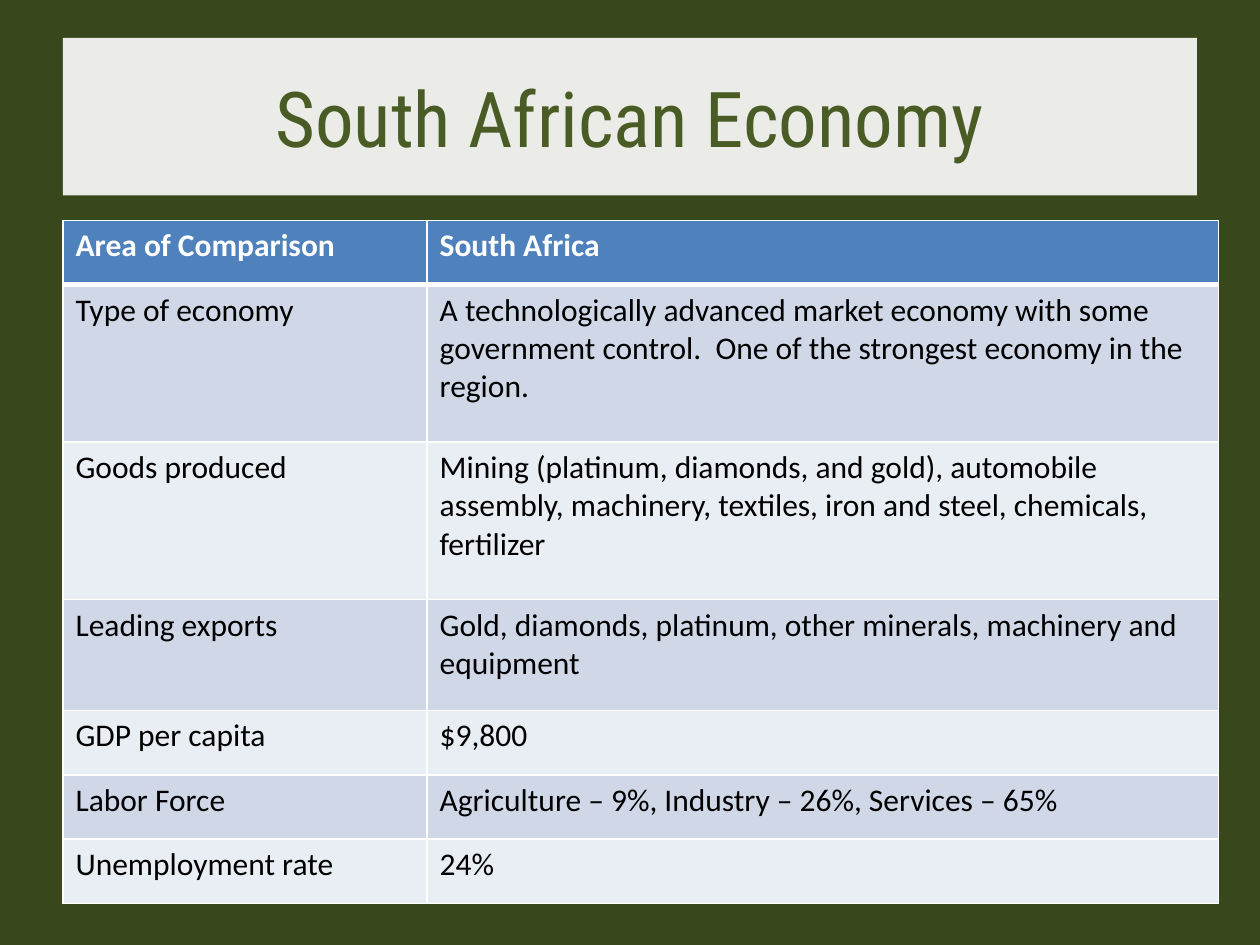
from lxml.etree import SubElement
from pptx import Presentation
from pptx.dml.color import RGBColor
from pptx.enum.shapes import MSO_SHAPE
from pptx.enum.text import MSO_ANCHOR, PP_ALIGN
from pptx.oxml.ns import qn
from pptx.util import Inches, Pt

DARK_GREEN = RGBColor(0x39, 0x47, 0x1D)
TITLE_GREEN = RGBColor(0x4A, 0x5C, 0x26)
HEADER_BLUE = RGBColor(0x4F, 0x81, 0xBD)
BAND_DARK = RGBColor(0xD0, 0xD8, 0xE8)
BAND_LIGHT = RGBColor(0xE9, 0xED, 0xF4)
WHITE = RGBColor(0xFF, 0xFF, 0xFF)
BLACK = RGBColor(0x00, 0x00, 0x00)

COLUMN_WIDTHS = [2.89, 6.28]
ECONOMY_ROWS = [
    (0.51, "Area of Comparison", "South Africa"),
    (1.25, "Type of economy",
     "A technologically advanced market economy with some government control.  "
     "One of the strongest economy in the region."),
    (1.25, "Goods produced",
     "Mining (platinum, diamonds, and gold), automobile assembly, machinery, "
     "textiles, iron and steel, chemicals, fertilizer"),
    (0.88, "Leading exports",
     "Gold, diamonds, platinum, other minerals, machinery and equipment"),
    (0.51, "GDP per capita", "$9,800"),
    (0.51, "Labor Force", "Agriculture – 9%, Industry – 26%, Services – 65%"),
    (0.51, "Unemployment rate", "24%"),
]


def add_border(cell, side, points):
    """Draw a white line on one side (L, R, T or B); call before filling the cell."""
    line = SubElement(cell._tc.get_or_add_tcPr(), qn(f"a:ln{side}"), w=str(Pt(points)))
    SubElement(SubElement(line, qn("a:solidFill")), qn("a:srgbClr"), val=str(WHITE))


def add_text(paragraph, text, font_name, size, color, bold=False):
    run = paragraph.add_run()
    run.text = text
    run.font.name = font_name
    run.font.size = Pt(size)
    run.font.color.rgb = color
    run.font.bold = bold


prs = Presentation()
prs.slide_width = Inches(10)
prs.slide_height = Inches(7.5)
slide = prs.slides.add_slide(prs.slide_layouts[6])
slide.background.fill.solid()
slide.background.fill.fore_color.rgb = DARK_GREEN

# Title band, 90% opaque
title = slide.shapes.add_shape(
    MSO_SHAPE.RECTANGLE, Inches(0.5), Inches(0.3), Inches(9), Inches(1.25))
title.shadow.inherit = False
title.line.fill.background()
title.fill.solid()
title.fill.fore_color.rgb = WHITE
title_color = title.fill._xPr.find(qn("a:solidFill")).find(qn("a:srgbClr"))
SubElement(title_color, qn("a:alpha"), val="90000")
title.text_frame.word_wrap = True
title.text_frame.vertical_anchor = MSO_ANCHOR.MIDDLE
heading = title.text_frame.paragraphs[0]
heading.alignment = PP_ALIGN.CENTER
add_text(heading, "South African Economy", "Roboto Condensed", 44, TITLE_GREEN)

# Economy table
economy = slide.shapes.add_table(
    len(ECONOMY_ROWS), len(COLUMN_WIDTHS), Inches(0.5), Inches(1.75),
    Inches(sum(COLUMN_WIDTHS)), Inches(sum(row[0] for row in ECONOMY_ROWS))).table
for column, width in zip(economy.columns, COLUMN_WIDTHS):
    column.width = Inches(width)

for index, (height, *texts) in enumerate(ECONOMY_ROWS):
    economy.rows[index].height = Inches(height)
    is_header = index == 0
    if is_header:
        row_fill = HEADER_BLUE
    else:
        row_fill = BAND_DARK if index % 2 else BAND_LIGHT
    for cell, text in zip(economy.rows[index].cells, texts):
        add_border(cell, "L", 1)
        add_border(cell, "R", 1)
        add_border(cell, "T", 3 if index == 1 else 1)
        add_border(cell, "B", 3 if is_header else 1)
        cell.fill.solid()
        cell.fill.fore_color.rgb = row_fill
        add_text(cell.text_frame.paragraphs[0], text, "Calibri", 18,
                 WHITE if is_header else BLACK, bold=is_header)

prs.save("out.pptx")
